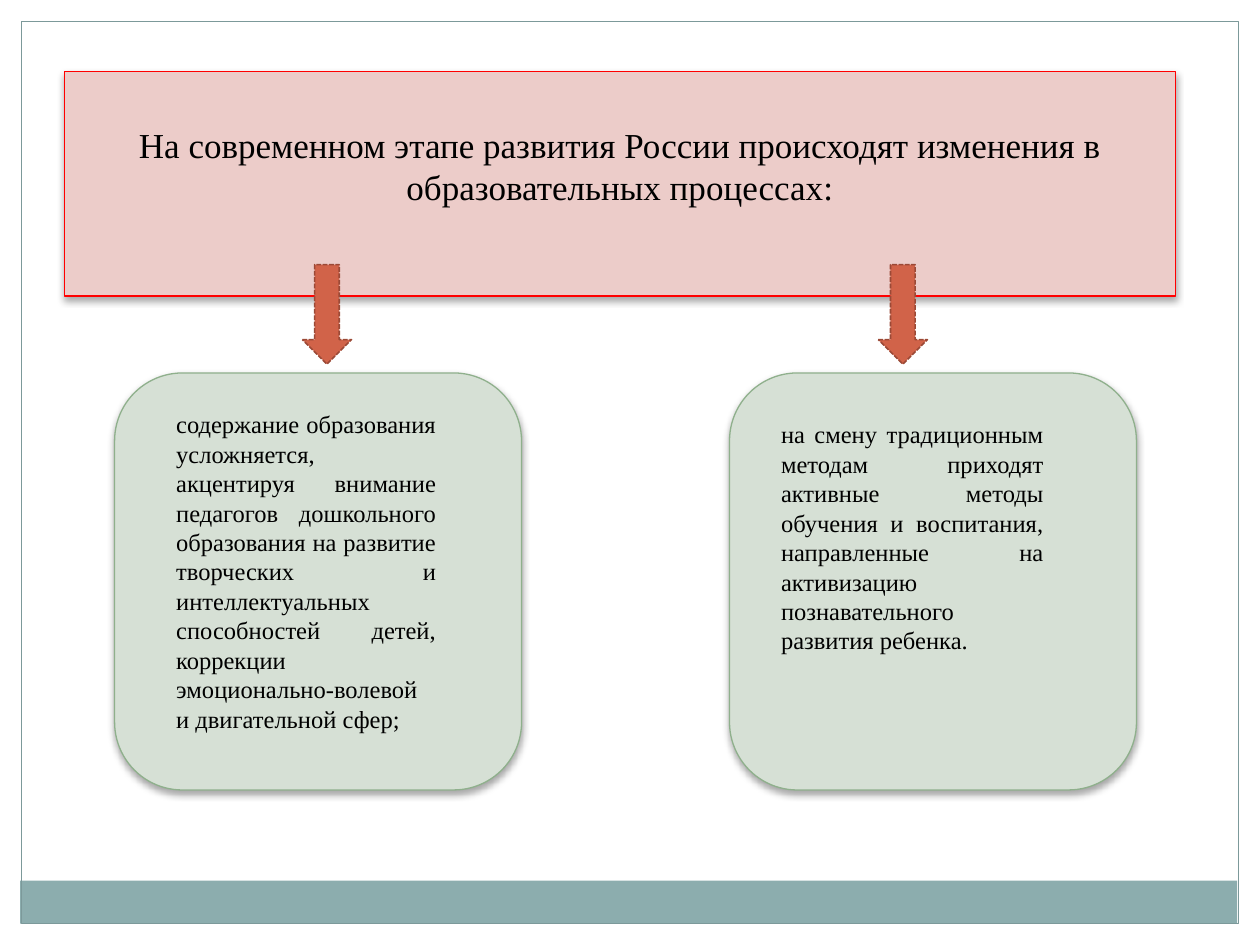
from lxml import etree
from pptx import Presentation
from pptx.dml.color import RGBColor
from pptx.enum.dml import MSO_LINE
from pptx.enum.shapes import MSO_SHAPE
from pptx.enum.text import MSO_ANCHOR, PP_ALIGN
from pptx.oxml.ns import qn
from pptx.util import Inches, Pt

RECT, ROUNDED, DOWN_ARROW = MSO_SHAPE.RECTANGLE, MSO_SHAPE.ROUNDED_RECTANGLE, MSO_SHAPE.DOWN_ARROW
CENTER, JUSTIFY = PP_ALIGN.CENTER, PP_ALIGN.JUSTIFY

HEADING = "На современном этапе развития России происходят изменения в образовательных процессах:"
# card left, arrow left, text box (left, top, width, height), text
CHANGES = [
    (0.91, 2.4, (1.3, 3.2, 2.26, 2.69),
     "содержание образования усложняется, акцентируя внимание педагогов дошкольного "
     "образования на развитие творческих и интеллектуальных способностей детей, "
     "коррекции эмоционально-волевой и двигательной сфер;"),
    (5.79, 6.97, (6.1, 3.28, 2.28, 1.99),
     "на смену традиционным методам приходят активные методы обучения и воспитания, "
     "направленные на активизацию познавательного развития ребенка."),
]
CARD_TOP, CARD_WIDTH, CARD_HEIGHT = 2.96, 3.23, 3.31
ARROW_TOP, ARROW_WIDTH, ARROW_HEIGHT = 2.1, 0.39, 0.79

THEME = {
    "font": "Times New Roman", "text": "000000", "heading_size": 20, "body_size": 14,
    "band": "8CADAE", "frame": "7C999A",
    "heading_fill": "ECCCC9", "heading_line": "FF0000",
    "card_fill": "D6E0D5", "card_line": "8FB08C",
    "arrow_fill": "D16349", "arrow_line": "9B4936", "shadow": "000000",
}


def color(name):
    return RGBColor.from_string(THEME[name])


def add_block(slide, kind, box, fill=None, line=None, line_width=0.75):
    block = slide.shapes.add_shape(kind, *map(Inches, box))
    block.shadow.inherit = False
    if fill:
        block.fill.solid()
        block.fill.fore_color.rgb = color(fill)
    else:
        block.fill.background()
    if line:
        block.line.color.rgb = color(line)
        block.line.width = Pt(line_width)
    else:
        block.line.fill.background()
    return block


def add_shadow(block):
    """Soft shadow straight below: 4 pt blur, 2 pt away, 35 % opaque."""
    effects = block._element.spPr.find(qn("a:effectLst"))
    shadow = etree.SubElement(effects, qn("a:outerShdw"), blurRad=str(Pt(4)), dist=str(Pt(2)),
                              dir="5400000", rotWithShape="0")
    tint = etree.SubElement(shadow, qn("a:srgbClr"), val=THEME["shadow"])
    etree.SubElement(tint, qn("a:alpha"), val="35000")


def write(frame, text, size, alignment):
    frame.word_wrap = True
    paragraph = frame.paragraphs[0]
    paragraph.text = text
    paragraph.alignment = alignment
    paragraph.font.name = THEME["font"]
    paragraph.font.size = Pt(THEME[size])
    paragraph.font.color.rgb = color("text")


def main():
    deck = Presentation()
    deck.slide_width, deck.slide_height = Inches(10), Inches(7.5)
    slide = deck.slides.add_slide(deck.slide_layouts[6])

    add_block(slide, RECT, (0.16, 6.99, 9.66, 0.34), "band")
    add_block(slide, RECT, (0.17, 0.17, 9.66, 7.16), line="frame")

    heading = add_block(slide, RECT, (0.51, 0.57, 8.82, 1.78), "heading_fill", "heading_line")
    add_shadow(heading)
    write(heading.text_frame, HEADING, "heading_size", CENTER)
    heading.text_frame.vertical_anchor = MSO_ANCHOR.MIDDLE
    heading.text_frame.margin_bottom = Inches(0.35)

    for card_left, arrow_left, text_box, text in CHANGES:
        card = add_block(slide, ROUNDED, (card_left, CARD_TOP, CARD_WIDTH, CARD_HEIGHT),
                         "card_fill", "card_line")
        add_shadow(card)
        body = slide.shapes.add_textbox(*map(Inches, text_box))
        write(body.text_frame, text, "body_size", JUSTIFY)
        arrow = add_block(slide, DOWN_ARROW, (arrow_left, ARROW_TOP, ARROW_WIDTH, ARROW_HEIGHT),
                          "arrow_fill", "arrow_line", 0.9)
        arrow.line.dash_style = MSO_LINE.SQUARE_DOT

    deck.save("out.pptx")


if __name__ == "__main__":
    main()
